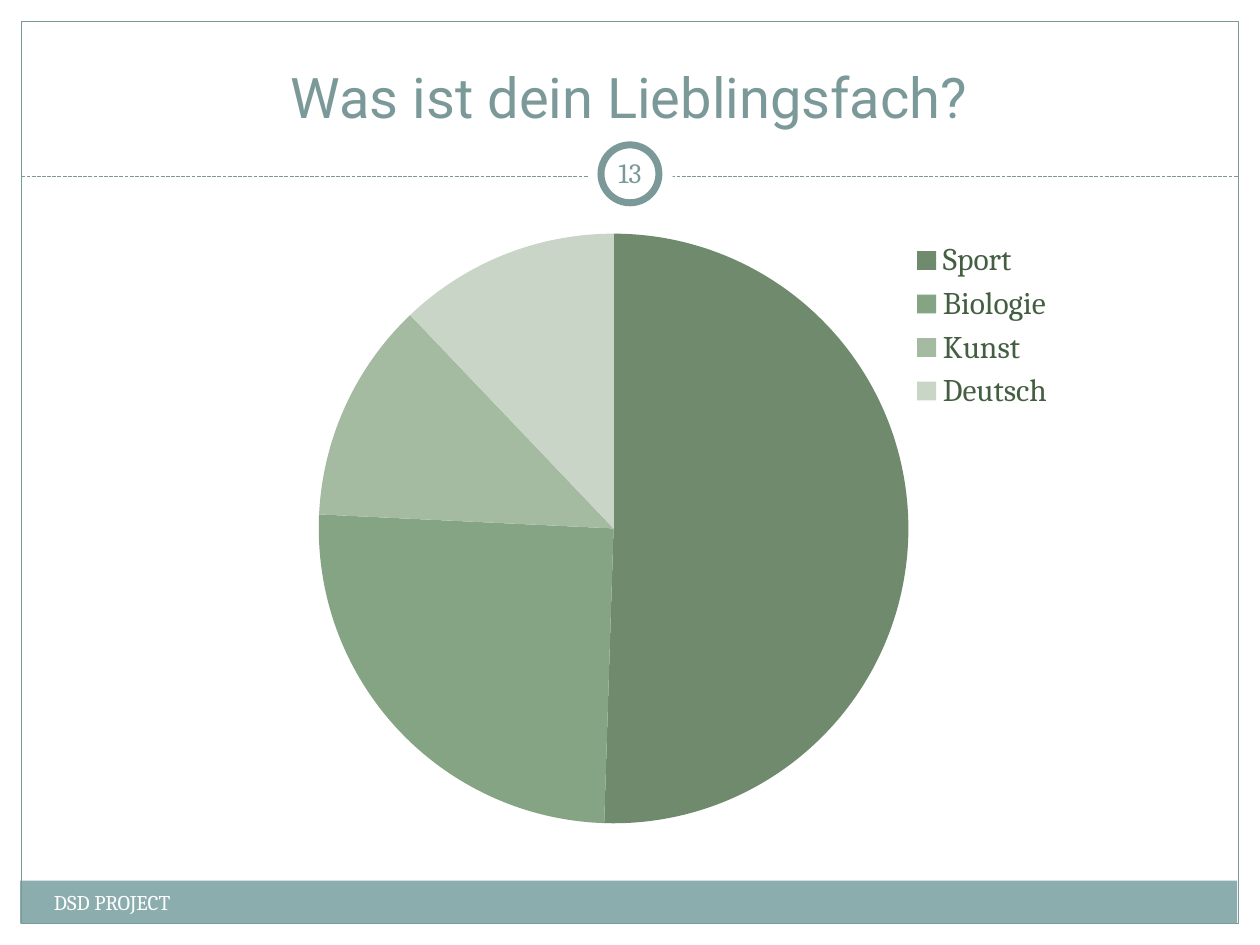
"""Build the favourite-subject slide with a pie chart."""
from typing import NamedTuple, Optional

from lxml import etree
from pptx import Presentation
from pptx.chart.data import CategoryChartData
from pptx.dml.color import RGBColor
from pptx.enum import chart as ch, dml, shapes, text
from pptx.oxml import ns
from pptx.util import Inches, Pt

WHITE = RGBColor(0xFF, 0xFF, 0xFF)
TEAL = RGBColor(0x7C, 0x99, 0x9A)
BAND = RGBColor(0x8C, 0xAD, 0xAE)
LEGEND = RGBColor(0x43, 0x5E, 0x40)
SERIF = "Cambria"


class Box(NamedTuple):
    x: float
    y: float
    w: float
    h: float


class Panel(NamedTuple):
    kind: shapes.MSO_SHAPE
    box: Box
    fill: Optional[RGBColor] = None
    line_pt: float = 0


class Label(NamedTuple):
    words: str
    box: Box
    size: int
    color: RGBColor
    align: text.PP_ALIGN
    anchor: text.MSO_ANCHOR
    font: str = SERIF
    inset: float = 0.1


class Slice(NamedTuple):
    subject: str
    share: int
    color: RGBColor


SLICES = [
    Slice("Sport", 50, RGBColor(0x6F, 0x8A, 0x6D)),
    Slice("Biologie", 25, RGBColor(0x85, 0xA4, 0x84)),
    Slice("Kunst", 12, RGBColor(0xA4, 0xBB, 0xA2)),
    Slice("Deutsch", 12, RGBColor(0xC9, 0xD5, 0xC7)),
]
FRAME = [
    Panel(shapes.MSO_SHAPE.RECTANGLE, Box(0, 0, 10, 1.52), WHITE),
    Panel(shapes.MSO_SHAPE.RECTANGLE, Box(0, 0, 0.17, 7.5), WHITE),
    Panel(shapes.MSO_SHAPE.RECTANGLE, Box(9.83, 0, 0.17, 7.5), WHITE),
    Panel(shapes.MSO_SHAPE.RECTANGLE, Box(0.16, 6.99, 9.66, 0.34), BAND),
    Panel(shapes.MSO_SHAPE.RECTANGLE, Box(0.17, 0.17, 9.66, 7.16), None, 0.75),
]
BADGE = [
    Panel(shapes.MSO_SHAPE.OVAL, Box(4.67, 1.05, 0.67, 0.67), WHITE),
    Panel(shapes.MSO_SHAPE.OVAL, Box(4.77, 1.15, 0.46, 0.46), WHITE, 4),
]
TITLE = Label("Was ist dein Lieblingsfach?", Box(0.33, 0.25, 9.33, 0.83), 32, TEAL,
              text.PP_ALIGN.CENTER, text.MSO_ANCHOR.BOTTOM, "Roboto")
LABELS = [
    Label("DSD PROJECT", Box(0.33, 7.01, 3.92, 0.4), 12, WHITE,
          text.PP_ALIGN.LEFT, text.MSO_ANCHOR.TOP),
    Label("13", Box(4.75, 1.13, 0.5, 0.48), 16, TEAL,
          text.PP_ALIGN.CENTER, text.MSO_ANCHOR.MIDDLE, inset=0.05),
]


def inches(box: Box) -> list:
    return [Inches(v) for v in box]


def add_panel(s, panel: Panel) -> None:
    sp = s.shapes.add_shape(panel.kind, *inches(panel.box))
    sp.shadow.inherit = False
    if panel.fill is None:
        sp.fill.background()
    else:
        sp.fill.solid()
        sp.fill.fore_color.rgb = panel.fill
    if panel.line_pt:
        sp.line.color.rgb = TEAL
        sp.line.width = Pt(panel.line_pt)
    else:
        sp.line.fill.background()


def add_rule(s) -> None:
    sp = s.shapes.add_connector(shapes.MSO_CONNECTOR.STRAIGHT, Inches(0.17), Inches(1.4),
                                Inches(9.83), Inches(1.4))
    sp.line.color.rgb = TEAL
    sp.line.width = Pt(0.75)
    sp.line.dash_style = dml.MSO_LINE.SQUARE_DOT
    etree.SubElement(sp.element.spPr, ns.qn("a:effectLst"))


def write(sp, label: Label) -> None:
    sp.left, sp.top, sp.width, sp.height = inches(label.box)
    tf = sp.text_frame
    tf.text = label.words
    tf.word_wrap = True
    tf.auto_size = text.MSO_AUTO_SIZE.NONE
    tf.vertical_anchor = label.anchor
    tf.margin_left = tf.margin_right = Inches(label.inset)
    tf.margin_top = tf.margin_bottom = Inches(0.05)
    p = tf.paragraphs[0]
    p.alignment = label.align
    font = p.runs[0].font
    font.name, font.size, font.color.rgb = label.font, Pt(label.size), label.color


def place(parent, before: str, box: Box, inner: bool = False) -> None:
    for old in parent.findall(ns.qn("c:layout")):
        parent.remove(old)
    layout = etree.Element(ns.qn("c:layout"))
    manual = etree.SubElement(layout, ns.qn("c:manualLayout"))
    settings = [("layoutTarget", "inner")] if inner else []
    settings += [("xMode", "edge"), ("yMode", "edge")]
    settings += [(k, str(v)) for k, v in box._asdict().items()]
    for tag, val in settings:
        etree.SubElement(manual, ns.qn(f"c:{tag}")).set("val", val)
    parent.find(ns.qn(before)).addprevious(layout)


def add_pie(s) -> None:
    data = CategoryChartData()
    data.categories = [item.subject for item in SLICES]
    data.add_series("Series 1", [item.share for item in SLICES])
    chart = s.shapes.add_chart(ch.XL_CHART_TYPE.PIE, *inches(Box(1, 1.72, 9, 4.95)), data).chart
    chart.has_title = False
    chart.font.name, chart.font.size = SERIF, Pt(18)
    chart.has_legend = True
    legend = chart.legend
    legend.position = ch.XL_LEGEND_POSITION.RIGHT
    legend.include_in_layout = False
    font = legend.font
    font.name, font.size, font.color.rgb = SERIF, Pt(18), LEGEND
    plot = chart.plots[0]
    plot.vary_by_categories = True
    for i, item in enumerate(SLICES):
        fmt = plot.series[0].points[i].format
        fmt.fill.solid()
        fmt.fill.fore_color.rgb = item.color
        fmt.line.fill.background()
    area = chart.element.find(".//" + ns.qn("c:plotArea"))
    place(area, "c:pieChart", Box(0.17, 0.02, 0.52, 0.96), inner=True)
    place(chart.element.find(".//" + ns.qn("c:legend")), "c:overlay", Box(0.69, 0.03, 0.13, 0.29))


def main() -> None:
    prs = Presentation()
    prs.slide_width, prs.slide_height = Inches(10), Inches(7.5)
    s = prs.slides.add_slide(prs.slide_layouts[5])
    for panel in FRAME:
        add_panel(s, panel)
    add_rule(s)
    for panel in BADGE:
        add_panel(s, panel)
    title = s.shapes.title
    write(title, TITLE)
    title.element.getparent().append(title.element)
    for label in LABELS:
        write(s.shapes.add_textbox(*inches(label.box)), label)
    add_pie(s)
    prs.save("out.pptx")


if __name__ == "__main__":
    main()
